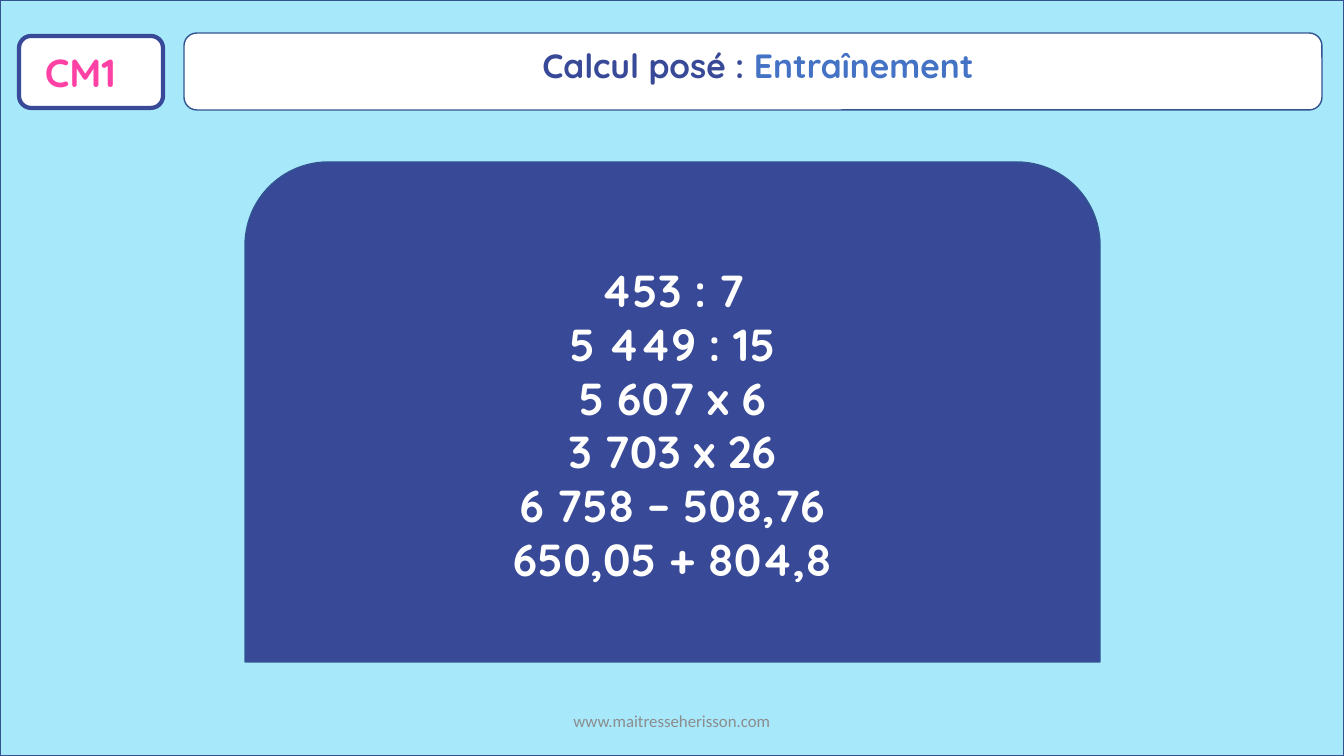
import pptx
import pptx.util
import pptx.dml.color
import pptx.enum.shapes
import pptx.enum.text

PX = 914400 / 100.8
SHAPES = pptx.enum.shapes.MSO_SHAPE
ANCHORS = pptx.enum.text.MSO_ANCHOR
ALIGNMENTS = pptx.enum.text.PP_ALIGN

THEME = {
    "sky": "A7E8FB", "white": "FFFFFF", "navy": "374997", "outline": "325491",
    "pink": "FF41A5", "blue": "4472C4", "grey": "8C8C8C",
    "level_size": 28, "title_size": 24, "exercise_size": 32, "footer_size": 12,
    "heading_font": "Quicksand", "footer_font": "Calibri",
}

presentation = pptx.Presentation()
presentation.slide_width = round(1344 * PX)
presentation.slide_height = round(756 * PX)
slide = presentation.slides.add_slide(presentation.slide_layouts[6])


def add_panel(kind, box, fill, line, line_width):
    shape = slide.shapes.add_shape(kind, *[round(length * PX) for length in box])
    shape.shadow.inherit = False
    shape.fill.solid()
    shape.fill.fore_color.rgb = pptx.dml.color.RGBColor.from_string(THEME[fill])
    shape.line.color.rgb = pptx.dml.color.RGBColor.from_string(THEME[line])
    shape.line.width = pptx.util.Pt(line_width)
    return shape


def write(shape, lines, size, font, alignment, anchor):
    """Each line is a list of (text, colour) runs."""
    frame = shape.text_frame
    frame.word_wrap = True
    frame.vertical_anchor = anchor
    for index, line in enumerate(lines):
        paragraph = frame.add_paragraph() if index else frame.paragraphs[0]
        paragraph.alignment = alignment
        for text, colour in line:
            run = paragraph.add_run()
            run.text = text
            run.font.name = THEME[font]
            run.font.size = pptx.util.Pt(THEME[size])
            run.font.bold = font == "heading_font"
            run.font.color.rgb = pptx.dml.color.RGBColor.from_string(THEME[colour])


# Background and header frames
add_panel(SHAPES.RECTANGLE, (0, 0, 1344, 756), "sky", "outline", 1)
add_panel(SHAPES.ROUNDED_RECTANGLE, (19, 36, 144, 72), "white", "navy", 3)
add_panel(SHAPES.ROUNDED_RECTANGLE, (184, 33, 1138, 77), "white", "outline", 1)

# Level, title and footer texts
labels = [
    ((35, 43, 111, 57), [("CM1", "pink")],
     "level_size", "heading_font", ALIGNMENTS.LEFT, ANCHORS.TOP),
    ((193, 40, 1130, 50), [("Calcul posé : ", "navy"), ("Entraînement", "blue")],
     "title_size", "heading_font", ALIGNMENTS.CENTER, ANCHORS.TOP),
    ((445, 701, 454, 40), [("www.maitresseherisson.com", "grey")],
     "footer_size", "footer_font", ALIGNMENTS.CENTER, ANCHORS.MIDDLE),
]
for box, line, size, font, alignment, anchor in labels:
    label = slide.shapes.add_textbox(*[round(length * PX) for length in box])
    write(label, [line], size, font, alignment, anchor)

# Exercise board
exercises = ["453 : 7", "5 449 : 15", "5 607 x 6",
             "3 703 x 26", "6 758 – 508,76", "650,05 + 804,8"]
board = add_panel(SHAPES.ROUND_2_SAME_RECTANGLE, (245, 162, 855, 500), "navy", "outline", 1)
write(board, [[(exercise, "white")] for exercise in exercises],
      "exercise_size", "heading_font", ALIGNMENTS.CENTER, ANCHORS.MIDDLE)

presentation.save("out.pptx")
